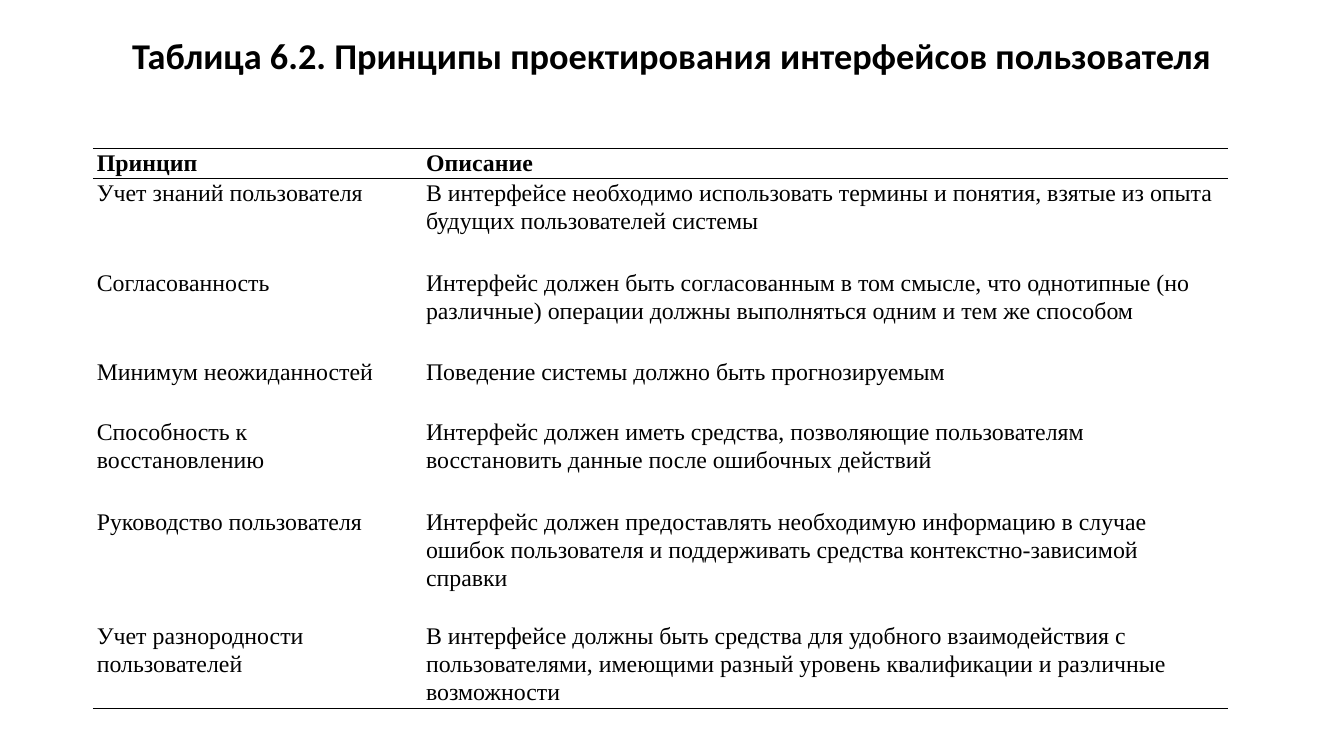
import dataclasses

import pptx
import pptx.dml.color
import pptx.enum.text
import pptx.oxml
import pptx.oxml.ns
import pptx.util

Inches = pptx.util.Inches
Pt = pptx.util.Pt
Align = pptx.enum.text.PP_ALIGN
Anchor = pptx.enum.text.MSO_ANCHOR
Fit = pptx.enum.text.MSO_AUTO_SIZE


@dataclasses.dataclass(frozen=True)
class Theme:
    ink: str = "000000"
    paper: str = "FFFFFF"
    head: str = "Calibri"
    body: str = "Times New Roman"
    big: float = 25.9
    small: float = 17
    rule: float = 1


THEME = Theme()
WIDE, HIGH = 13.33, 7.5
TITLE = "Таблица 6.2. Принципы проектирования интерфейсов пользователя"
SHARES = (0.29, 0.71)
ROWS = (
    (0.3, "Принцип", "Описание"),
    (0.89, "Учет знаний пользователя",
     "В интерфейсе необходимо использовать термины и понятия, взятые из опыта "
     "будущих пользователей системы"),
    (0.89, "Согласованность",
     "Интерфейс должен быть согласованным в том смысле, что однотипные (но "
     "различные) операции должны выполняться одним и тем же способом"),
    (0.59, "Минимум неожиданностей",
     "Поведение системы должно быть прогнозируемым"),
    (0.89, "Способность к восстановлению",
     "Интерфейс должен иметь средства, позволяющие пользователям "
     "восстановить данные после ошибочных действий"),
    (1.13, "Руководство пользователя",
     "Интерфейс должен предоставлять необходимую информацию в случае "
     "ошибок пользователя и поддерживать средства контекстно-зависимой справки"),
    (0.87, "Учет разнородности пользователей",
     "В интерфейсе должны быть средства для удобного взаимодействия с "
     "пользователями, имеющими разный уровень квалификации и различные "
     "возможности"),
)


def tint(code):
    return pptx.dml.color.RGBColor.from_string(code)


def write(para, text, face, size, bold, space):
    para.line_spacing = space
    run = para.add_run()
    run.text = text
    font = run.font
    font.name, font.size, font.bold = face, Pt(size), bold
    font.color.rgb = tint(THEME.ink)


def edge(cell, sides):
    props = cell._tc.get_or_add_tcPr()
    for spot, side in enumerate("LRTB"):
        if side in sides:
            width = Pt(THEME.rule)
            paint = f'<a:solidFill><a:srgbClr val="{THEME.ink}"/></a:solidFill>'
        else:
            width, paint = 0, "<a:noFill/>"
        space = pptx.oxml.ns.nsdecls("a")
        line = f'<a:ln{side} {space} w="{width}">{paint}</a:ln{side}>'
        props.insert(spot, pptx.oxml.parse_xml(line))


def add_title(slide, box):
    shape = slide.shapes.title
    shape.left, shape.top, shape.width, shape.height = map(Inches, box)
    frame = shape.text_frame
    frame.word_wrap = True
    frame.auto_size = Fit.NONE
    frame.vertical_anchor = Anchor.TOP
    para = frame.paragraphs[0]
    para.alignment = Align.CENTER
    para.space_before = Pt(10)
    write(para, TITLE, THEME.head, THEME.big, True, 0.8)


def fill_cell(cell, text, bold, sides):
    cell.fill.solid()
    cell.fill.fore_color.rgb = tint(THEME.paper)
    cell.margin_left = cell.margin_right = Inches(0.04)
    cell.margin_top = cell.margin_bottom = 0
    cell.vertical_anchor = Anchor.TOP
    write(cell.text_frame.paragraphs[0], text, THEME.body, THEME.small, bold, 1.07)
    edge(cell, sides)


def add_grid(slide, box):
    frame = slide.shapes.add_table(len(ROWS), len(SHARES), *map(Inches, box))
    table = frame.table
    table.first_row = table.horz_banding = False
    for col, share in zip(table.columns, SHARES):
        col.width = Inches(box[2] * share)
    last = len(ROWS) - 1
    for i, (tall, *texts) in enumerate(ROWS):
        table.rows[i].height = Inches(tall)
        sides = {0: "TB", 1: "T", last: "B"}.get(i, "")
        for j, text in enumerate(texts):
            fill_cell(table.cell(i, j), text, i == 0, sides)


def build_slide(deck):
    slide = deck.slides.add_slide(deck.slide_layouts[5])
    left = 0.92
    add_title(slide, (left, 0.36, WIDE - 2 * left, 0.47))
    tall = sum(row[0] for row in ROWS)
    add_grid(slide, (left, 1.47, 11.26, tall))


def main():
    deck = pptx.Presentation()
    deck.slide_width, deck.slide_height = Inches(WIDE), Inches(HIGH)
    build_slide(deck)
    deck.save("out.pptx")


if __name__ == "__main__":
    main()
